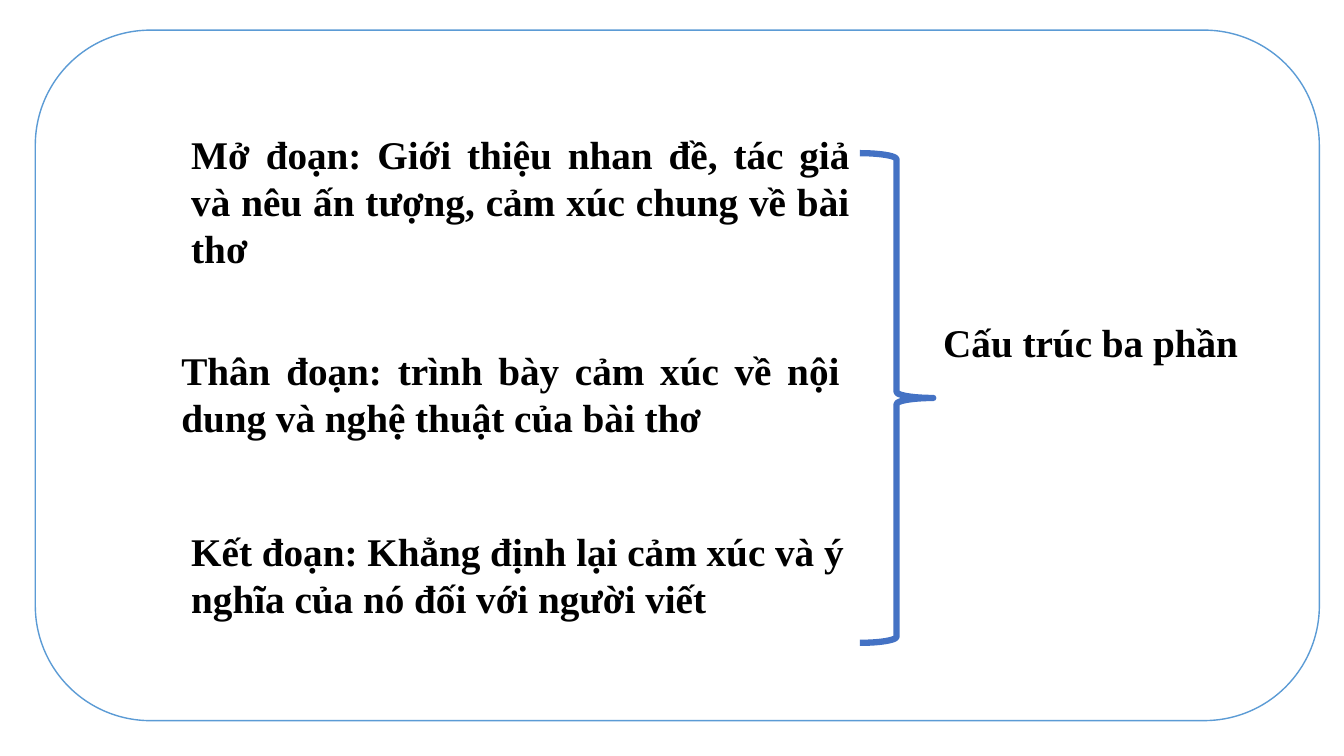
from dataclasses import dataclass

from pptx import Presentation
from pptx.dml.color import RGBColor
from pptx.enum.shapes import MSO_SHAPE
from pptx.enum.text import MSO_AUTO_SIZE, PP_ALIGN
from pptx.util import Cm, Pt


@dataclass(frozen=True)
class Theme:
    font: str = "Times New Roman"
    body_size: float = 28
    ink: RGBColor = RGBColor(0, 0, 0)
    paper: RGBColor = RGBColor(0xFF, 0xFF, 0xFF)
    frame_line: RGBColor = RGBColor(0x5B, 0x9B, 0xD5)
    brace_line: RGBColor = RGBColor(0x44, 0x72, 0xC4)
    frame_weight: float = 1
    brace_weight: float = 4.5


@dataclass(frozen=True)
class Box:
    """A rectangle in centimetres."""
    left: float
    top: float
    width: float
    height: float

    def inner(self, left, top, width, height):
        """Return a box whose offset is measured from this one."""
        return Box(self.left + left, self.top + top, width, height)

    def lengths(self):
        return Cm(self.left), Cm(self.top), Cm(self.width), Cm(self.height)


THEME = Theme()

# Text, left and top within the column, height, alignment
PARTS = [
    ("Mở đoạn: Giới thiệu nhan đề, tác giả và nêu ấn tượng, cảm xúc chung về bài thơ",
     0.25, 0, 3.84, PP_ALIGN.JUSTIFY),
    ("Thân đoạn: trình bày cảm xúc về nội dung và nghệ thuật của bài thơ",
     0, 5.46, 2.64, PP_ALIGN.JUSTIFY),
    ("Kết đoạn: Khẳng định lại cảm xúc và ý nghĩa của nó đối với người viết",
     0.25, 10.01, 2.64, PP_ALIGN.LEFT),
]


def add_text(slide, box, text, *, align=PP_ALIGN.JUSTIFY, bold=True,
             size=THEME.body_size, color=THEME.ink):
    frame = slide.shapes.add_textbox(*box.lengths()).text_frame
    frame.word_wrap = True
    frame.auto_size = MSO_AUTO_SIZE.SHAPE_TO_FIT_TEXT
    paragraph = frame.paragraphs[0]
    paragraph.alignment = align
    run = paragraph.add_run()
    run.text = text
    run.font.name = THEME.font
    run.font.size = Pt(size)
    run.font.bold = bold
    run.font.color.rgb = color


def add_outline(slide, preset, box, color, weight, fill=None):
    outline = slide.shapes.add_shape(preset, *box.lengths())
    outline.shadow.inherit = False
    if fill is None:
        outline.fill.background()
    else:
        outline.fill.solid()
        outline.fill.fore_color.rgb = fill
    outline.line.color.rgb = color
    outline.line.width = Pt(weight)


def add_parts(slide, column):
    for text, left, top, height, align in PARTS:
        part_box = column.inner(left, top, column.width - 0.25, height)
        add_text(slide, part_box, text, align=align)


def add_summary(slide, box):
    """Draw the brace and the label to the right of its point."""
    brace = box.inner(0, 0, 1.85, box.height)
    add_outline(slide, MSO_SHAPE.RIGHT_BRACE, brace,
                THEME.brace_line, THEME.brace_weight)
    label = box.inner(brace.width, 4.04, box.width - brace.width, 1.45)
    add_text(slide, label, "Cấu trúc ba phần")


def add_structure_slide(presentation, frame):
    slide = presentation.slides.add_slide(presentation.slide_layouts[6])
    add_outline(slide, MSO_SHAPE.ROUNDED_RECTANGLE, frame,
                THEME.frame_line, THEME.frame_weight, fill=THEME.paper)
    add_parts(slide, frame.inner(3.43, 2.39, 17.34, 12.65))
    add_summary(slide, frame.inner(20.78, 3.1, 10.92, 12.34))


def main():
    presentation = Presentation()
    presentation.slide_width = Cm(33.87)
    presentation.slide_height = Cm(19.05)
    add_structure_slide(presentation, Box(0.89, 0.76, 32.36, 17.4))
    presentation.save("out.pptx")


if __name__ == "__main__":
    main()
